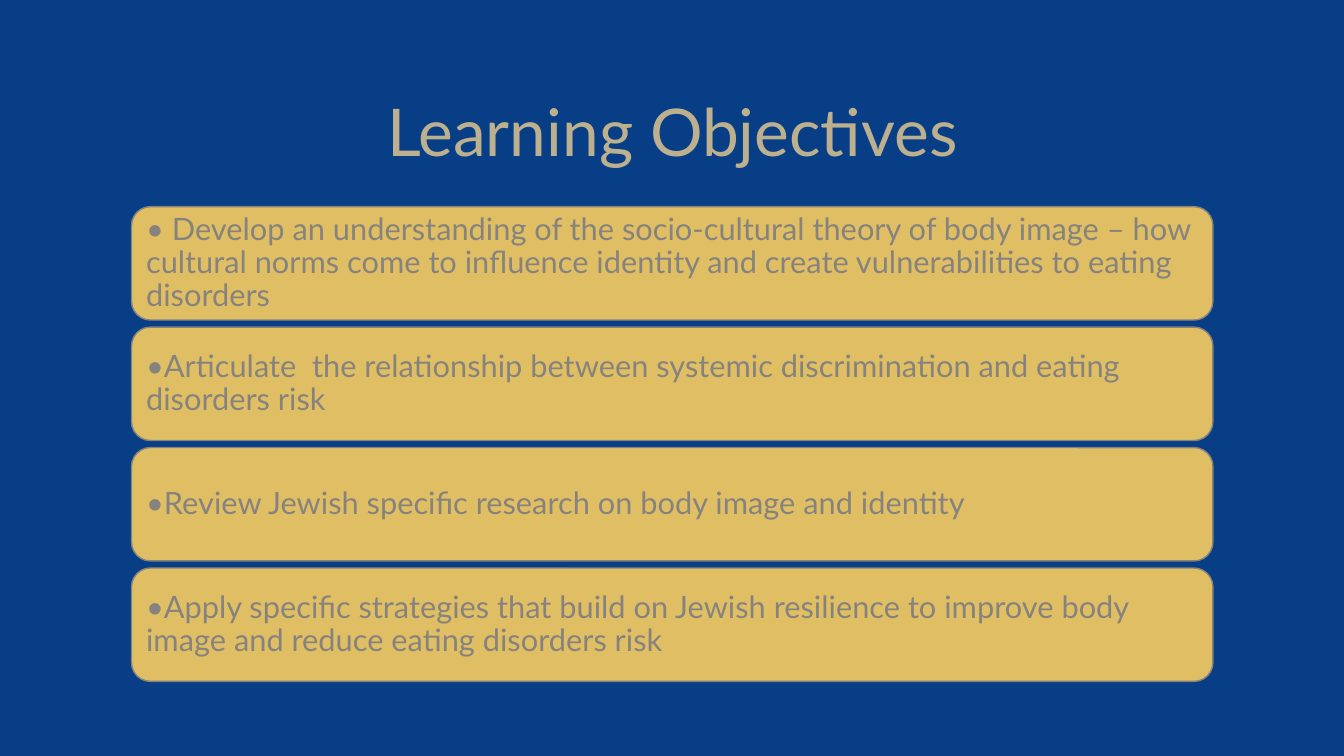
import pptx
import pptx.util
import pptx.dml.color
import pptx.enum.shapes
import pptx.enum.text
from pptx.util import Inches


def color(hex_string):
    return pptx.dml.color.RGBColor.from_string(hex_string)


def add_text(shape, text, size, hex_string, alignment, inset):
    frame = shape.text_frame
    frame.word_wrap = True
    frame.auto_size = pptx.enum.text.MSO_AUTO_SIZE.NONE
    frame.vertical_anchor = pptx.enum.text.MSO_ANCHOR.MIDDLE
    frame.margin_left = frame.margin_right = Inches(inset)
    frame.margin_top = frame.margin_bottom = Inches(inset)
    paragraph = frame.paragraphs[0]
    paragraph.alignment = alignment
    run = paragraph.add_run()
    run.text = text
    run.font.name = "Lato"
    run.font.size = pptx.util.Pt(size)
    run.font.color.rgb = color(hex_string)
    return paragraph


presentation = pptx.Presentation()
presentation.slide_width = Inches(26.67)
presentation.slide_height = Inches(15)
slide = presentation.slides.add_slide(presentation.slide_layouts[5])
slide.background.fill.solid()
slide.background.fill.fore_color.rgb = color("073E86")

left, width = 2.61, 21.46
title = slide.shapes.title
title.left, title.top = Inches(left), Inches(1.31)
title.width, title.height = Inches(width), Inches(2.54)
add_text(title, "Learning Objectives", 94, "BCB08F", pptx.enum.text.PP_ALIGN.CENTER, 0.06)

objectives = [
    "• Develop an understanding of the socio-cultural theory of body image – how "
    "cultural norms come to influence identity and create vulnerabilities to eating disorders",
    "•Articulate  the relationship between systemic discrimination and eating disorders risk",
    "•Review Jewish specific research on body image and identity",
    "•Apply specific strategies that build on Jewish resilience to improve body "
    "image and reduce eating disorders risk",
]
first_top, card_height, gap = 4.1, 2.25, 0.14
for index, objective in enumerate(objectives):
    card = slide.shapes.add_shape(
        pptx.enum.shapes.MSO_SHAPE.ROUNDED_RECTANGLE,
        Inches(left), Inches(first_top + index * (card_height + gap)),
        Inches(width), Inches(card_height))
    card.shadow.inherit = False
    card.fill.solid()
    card.fill.fore_color.rgb = color("E0BF64")
    card.line.color.rgb = color("86837F")
    card.line.width = pptx.util.Pt(2)
    paragraph = add_text(card, objective, 44, "86837F", pptx.enum.text.PP_ALIGN.LEFT, 0.18)
    paragraph.line_spacing = 0.9

presentation.save("out.pptx")
